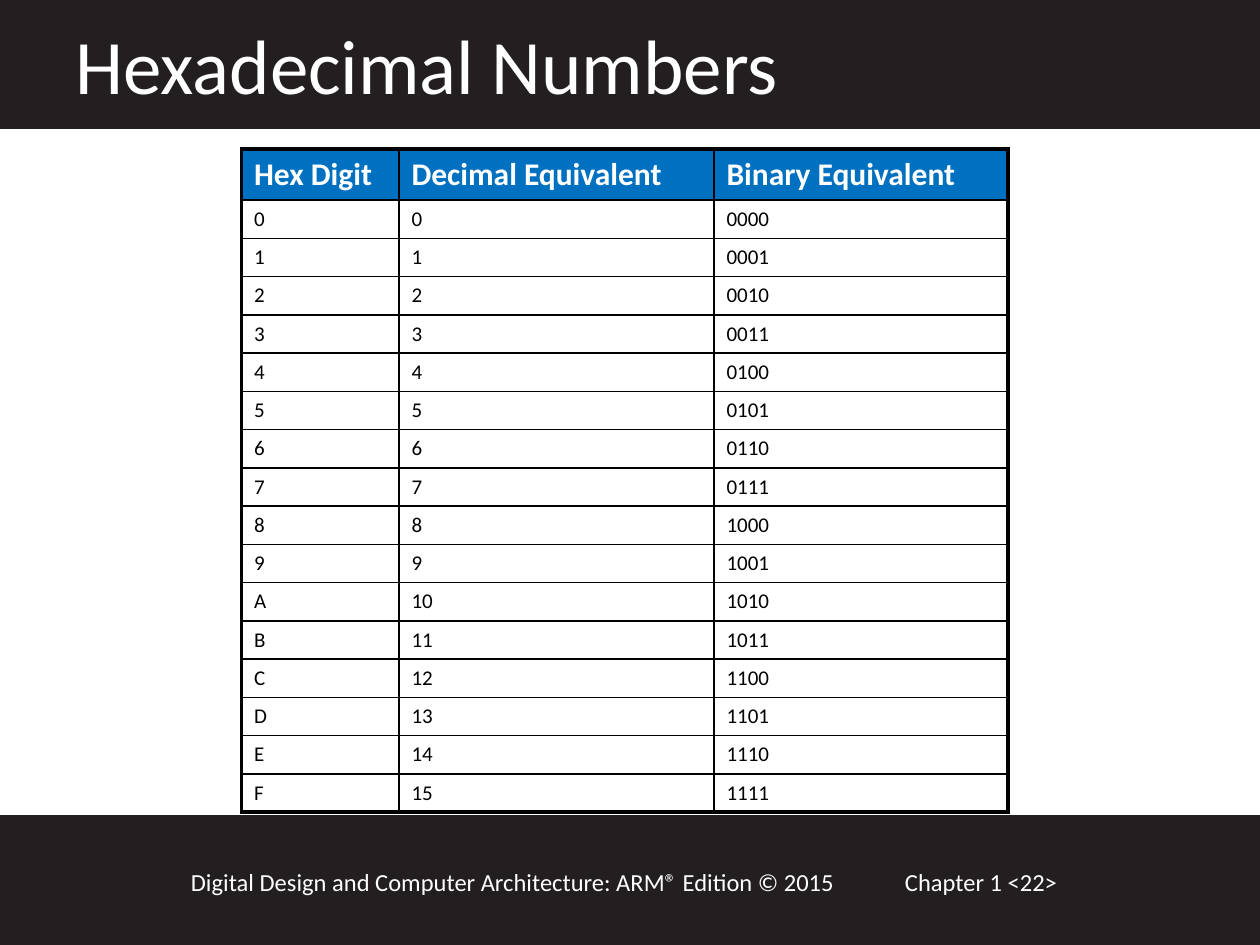
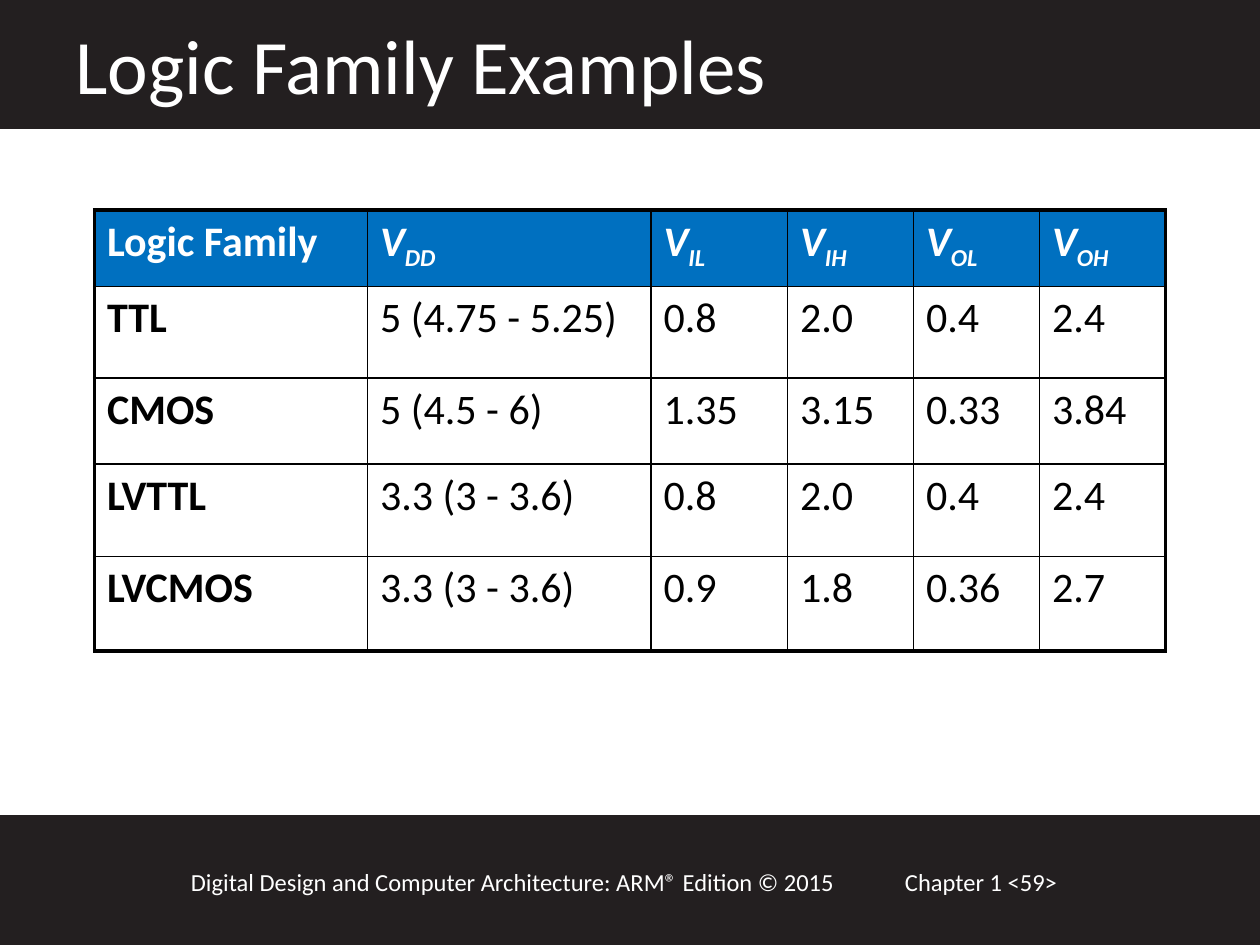
from lxml import etree
from pptx import Presentation
from pptx.dml.color import RGBColor
from pptx.enum.shapes import MSO_SHAPE
from pptx.enum.text import MSO_ANCHOR, MSO_AUTO_SIZE, PP_ALIGN
from pptx.oxml.ns import qn
from pptx.util import Inches, Pt

RECT = MSO_SHAPE.RECTANGLE
LEFT = PP_ALIGN.LEFT
TOP, MIDDLE = MSO_ANCHOR.TOP, MSO_ANCHOR.MIDDLE
NO_FIT = MSO_AUTO_SIZE.NONE

DARK = RGBColor(0x23, 0x1F, 0x20)
WHITE = RGBColor(0xFF, 0xFF, 0xFF)
BLACK = RGBColor(0x00, 0x00, 0x00)
BLUE = RGBColor(0x00, 0x70, 0xC0)
FONT = "Calibri"
THIN, THICK = 1, 2.25
TITLE_ONLY = 5

COLS, ROWS = 120, 90  # the slide is a grid of twelfths of an inch
UNIT = Inches(10) / COLS
BOOK = "Digital Design and Computer Architecture: ARM® Edition © 2015"

FAMILIES = [
    ("TTL", "5 (4.75 - 5.25)", "0.8", "2.0", "0.4", "2.4"),
    ("CMOS", "5 (4.5 - 6)", "1.35", "3.15", "0.33", "3.84"),
    ("LVTTL", "3.3 (3 - 3.6)", "0.8", "2.0", "0.4", "2.4"),
    ("LVCMOS", "3.3 (3 - 3.6)", "0.9", "1.8", "0.36", "2.7"),
]


def grid(*units):
    return [round(unit * UNIT) for unit in units]


def add_run(para, text, size, color, bold=False, italic=False, sub=False):
    run = para.add_run()
    run.text = text
    font = run.font
    font.name, font.size, font.bold, font.italic = FONT, Pt(size), bold, italic
    font.color.rgb = color
    if sub:
        run._r.get_or_add_rPr().set("baseline", "-25000")


def add_band(slide, top, height):
    band = slide.shapes.add_shape(RECT, *grid(0, top, COLS, height))
    band.shadow.inherit = False
    band.fill.solid()
    band.fill.fore_color.rgb = DARK
    band.line.color.rgb = DARK
    band.line.width = Pt(2)


def add_note(slide, left, width, text):
    """Add one part of the footer line."""
    box = slide.shapes.add_textbox(*grid(left, 82, width, 4))
    box.text_frame.word_wrap = True
    add_run(box.text_frame.paragraphs[0], text, 14, WHITE)


def set_title(slide, text):
    title = slide.shapes.title
    title.left, title.top, title.width, title.height = grid(6, 1, 104, 10.1)
    frame = title.text_frame
    frame.auto_size = NO_FIT
    frame.vertical_anchor = MIDDLE
    frame.paragraphs[0].alignment = LEFT
    add_run(frame.paragraphs[0], text, 44, WHITE)
    slide.shapes._spTree.append(title._element)  # in front of the bands


def add_page(deck, title, number):
    slide = deck.slides.add_slide(deck.slide_layouts[TITLE_ONLY])
    add_band(slide, 77.8, ROWS - 77.8)
    add_band(slide, 0, 12.1)
    add_note(slide, 85, 26, f"Chapter 1 <{number}>")
    add_note(slide, 17, 69, BOOK)
    set_title(slide, title)
    return slide


def set_edges(cell, outer):
    """Draw the four borders, thick on the outer sides."""
    props = cell._tc.get_or_add_tcPr()
    for side in "LRTB":
        width = Pt(THICK if side in outer else THIN)
        line = etree.SubElement(props, qn(f"a:ln{side}"), w=str(width))
        fill = etree.SubElement(line, qn("a:solidFill"))
        etree.SubElement(fill, qn("a:srgbClr"), val=str(BLACK))


def add_grid(slide, left, top, widths, heights):
    """Add a table with a blue head row and a thick outer frame."""
    frame = slide.shapes.add_table(
        len(heights), len(widths), *grid(left, top, sum(widths), sum(heights)))
    table = frame.table
    table.first_row = table.horz_banding = False
    for col, width in zip(table.columns, grid(*widths)):
        col.width = width
    for row, height in zip(table.rows, grid(*heights)):
        row.height = height
    last_row, last_col = len(heights) - 1, len(widths) - 1
    for y in range(len(heights)):
        for x in range(len(widths)):
            cell = table.cell(y, x)
            sides = {"L": x == 0, "R": x == last_col,
                     "T": y == 0, "B": y == last_row}
            set_edges(cell, [side for side, out in sides.items() if out])
            cell.vertical_anchor = TOP
            if y == 0:
                cell.fill.solid()
                cell.fill.fore_color.rgb = BLUE
            else:
                cell.fill.background()
    return table


def get_para(table, y, x):
    return table.cell(y, x).text_frame.paragraphs[0]


def fill_body(table, rows, size, bold_first=False):
    for y, row in enumerate(rows, 1):
        for x, text in enumerate(row):
            add_run(get_para(table, y, x), text, size, BLACK,
                    bold=bold_first and x == 0)


def add_hex(deck):
    slide = add_page(deck, "Hexadecimal Numbers", 22)
    table = add_grid(slide, 23, 14.2, [15, 30, 28], [4.8] + [3.6] * 16)
    heads = ["Hex Digit", "Decimal Equivalent", "Binary Equivalent"]
    for x, head in enumerate(heads):
        add_run(get_para(table, 0, x), head, 18, WHITE, bold=True)
    fill_body(table, [(f"{n:X}", str(n), f"{n:04b}") for n in range(16)], 12)


def add_logic(deck):
    slide = add_page(deck, "Logic Family Examples", 59)
    table = add_grid(slide, 9, 20, [26, 27, 13, 12, 12, 12],
                     [7.3, 8.7, 8.2, 8.8, 9])
    add_run(get_para(table, 0, 0), "Logic Family", 24, WHITE, bold=True)
    for x, level in enumerate(["DD", "IL", "IH", "OL", "OH"], 1):
        para = get_para(table, 0, x)
        add_run(para, "V", 24, WHITE, bold=True, italic=True)
        add_run(para, level, 24, WHITE, bold=True, italic=True, sub=True)
    fill_body(table, FAMILIES, 24, bold_first=True)


def main():
    deck = Presentation()
    deck.slide_width, deck.slide_height = grid(COLS, ROWS)
    add_hex(deck)
    add_logic(deck)
    deck.save("out.pptx")


if __name__ == "__main__":
    main()
